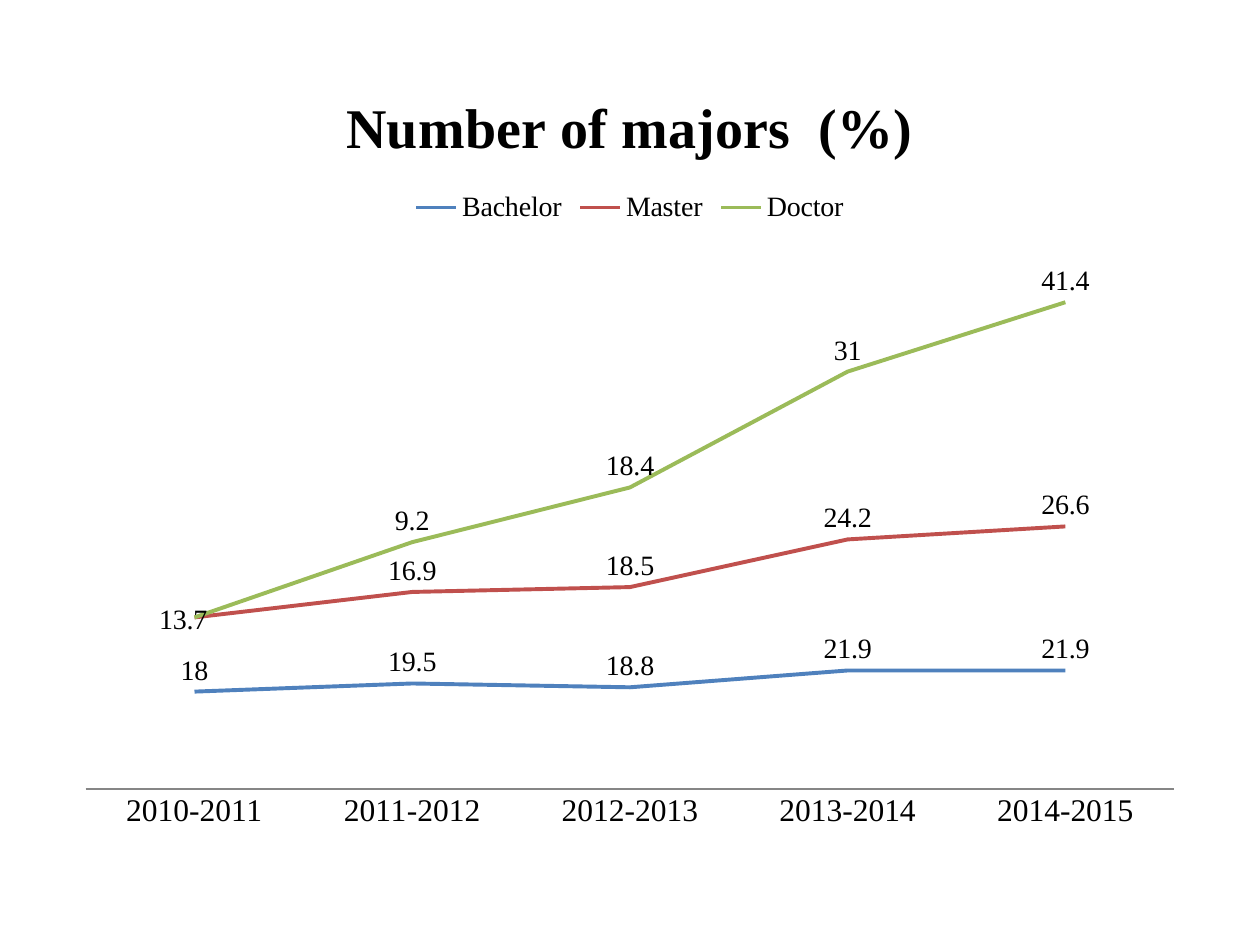
from dataclasses import dataclass
from typing import Optional

from lxml import etree
from pptx import Presentation
from pptx.chart import data as chart_data
from pptx.dml.color import RGBColor
from pptx.enum import chart as chart_enum
from pptx.oxml import parse_xml
from pptx.oxml.ns import nsdecls, qn
from pptx.util import Inches, Pt

FONT = "Times New Roman"
BLACK = RGBColor(0x00, 0x00, 0x00)
GREY = RGBColor(0x86, 0x86, 0x86)
BLUE = RGBColor(0x4F, 0x81, 0xBD)
RED = RGBColor(0xC0, 0x50, 0x4D)
GREEN = RGBColor(0x9B, 0xBB, 0x59)


@dataclass(frozen=True)
class Degree:
    name: str
    shares: tuple[Optional[float], ...]
    color: RGBColor


YEARS = [f"{year}-{year + 1}" for year in range(2010, 2015)]
DEGREES = [
    Degree("Bachelor", (18, 19.5, 18.8, 21.9, 21.9), BLUE),
    Degree("Master", (13.7, 16.9, 18.5, 24.2, 26.6), RED),
    Degree("Doctor", (None, 9.2, 18.4, 31, 41.4), GREEN),
]


def format_font(font, size: float, bold: bool = False) -> None:
    font.name = FONT
    font.size = Pt(size)
    font.bold = bold
    font.color.rgb = BLACK


def write_text(text_frame, content: str, *, size: float, bold: bool = False) -> None:
    run = text_frame.paragraphs[0].add_run()
    run.text = content
    format_font(run.font, size, bold)


def manual_layout(**settings: object) -> etree._Element:
    tags = "".join(f'<c:{tag} val="{value}"/>' for tag, value in settings.items())
    return parse_xml(
        f'<c:layout {nsdecls("c")}><c:manualLayout>{tags}</c:manualLayout></c:layout>'
    )


def format_series(series, degree: Degree) -> None:
    series.smooth = False
    series.format.line.color.rgb = degree.color
    series.format.line.width = Pt(2.25)
    series.marker.style = chart_enum.XL_MARKER_STYLE.NONE
    labels = series.data_labels
    labels.show_value = True
    labels.position = chart_enum.XL_LABEL_POSITION.ABOVE
    format_font(labels.font, 16)


def shift_first_label(series, x: float, y: float) -> None:
    label = series.points[0].data_label
    label.position = chart_enum.XL_LABEL_POSITION.ABOVE
    format_font(label.font, 16)
    element = series.data_labels._element.find(qn("c:dLbl"))
    element.insert(1, manual_layout(x=x, y=y))


def hide_first_label(series) -> None:
    series.data_labels._element.insert(0, parse_xml(
        f'<c:dLbl {nsdecls("c")}><c:idx val="0"/><c:delete val="1"/></c:dLbl>'
    ))


def format_axes(chart) -> None:
    category_axis = chart.category_axis
    category_axis.major_tick_mark = chart_enum.XL_TICK_MARK.NONE
    category_axis.format.line.color.rgb = GREY
    category_axis.format.line.width = Pt(0.75)
    format_font(category_axis.tick_labels.font, 18)
    value_axis = chart.value_axis
    value_axis.has_major_gridlines = False
    value_axis.minimum_scale = 0
    value_axis.maximum_scale = 100
    value_axis.visible = False


def add_majors_chart(slide) -> None:
    majors = chart_data.CategoryChartData()
    majors.categories = YEARS
    for degree in DEGREES:
        majors.add_series(degree.name, degree.shares)
    chart = slide.shapes.add_chart(
        chart_enum.XL_CHART_TYPE.LINE_STACKED,
        Inches(0.5), Inches(0.47), Inches(9), Inches(6.23), majors,
    ).chart
    format_font(chart.font, 10)
    chart.has_title = True
    write_text(chart.chart_title.text_frame, "Number of majors  (%)", size=32, bold=True)
    chart.has_legend = True
    chart.legend.position = chart_enum.XL_LEGEND_POSITION.TOP
    chart.legend.include_in_layout = False
    format_font(chart.legend.font, 16)
    format_axes(chart)

    plot = chart.plots[0]
    plot.vary_by_categories = False
    for series, degree in zip(plot.series, DEGREES):
        format_series(series, degree)
    bachelor, master, doctor = plot.series
    shift_first_label(master, -0.01, 0.03)
    hide_first_label(doctor)

    chart_root = chart._chartSpace.chart
    plot_area = chart_root.plotArea
    for layout in plot_area.findall(qn("c:layout")):
        plot_area.remove(layout)
    plot_area.insert(0, manual_layout(
        layoutTarget="inner", xMode="edge", yMode="edge", x=0.02, y=0.24, w=0.96, h=0.69,
    ))
    chart_root.find(qn("c:dispBlanksAs")).set("val", "zero")


def main() -> None:
    presentation = Presentation()
    presentation.slide_width = Inches(10)
    presentation.slide_height = Inches(7.5)
    slide = presentation.slides.add_slide(presentation.slide_layouts[6])
    add_majors_chart(slide)
    presentation.save("out.pptx")


if __name__ == "__main__":
    main()
